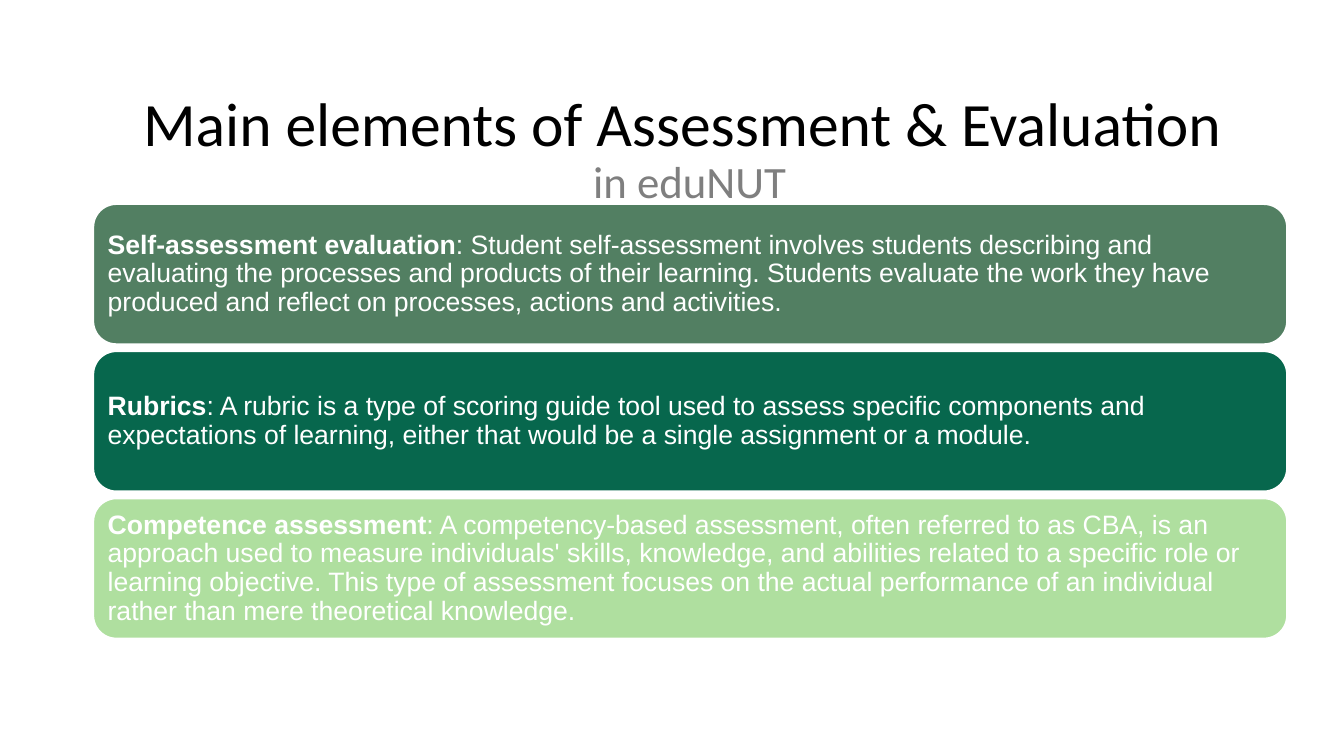
"""Build the slide on the main elements of assessment and evaluation."""
from pptx import Presentation
from pptx.dml.color import RGBColor
from pptx.enum.shapes import MSO_SHAPE
from pptx.enum.text import MSO_ANCHOR, MSO_AUTO_SIZE, PP_ALIGN
from pptx.util import Pt

PX = 9144
SLIDE_WIDTH, SLIDE_HEIGHT = 1333, 750
TITLE_BOX = (109, 82, 1150, 135)
CARDS_BOX = (92, 202, 1185, 432)
CARD_GAP = 6

BLACK = RGBColor(0x00, 0x00, 0x00)
GREY = RGBColor(0x7F, 0x7F, 0x7F)
WHITE = RGBColor(0xFF, 0xFF, 0xFF)
SAGE = RGBColor(0x52, 0x7F, 0x62)
FOREST = RGBColor(0x07, 0x67, 0x4D)
MINT = RGBColor(0xAF, 0xDF, 0x9F)

ELEMENTS = [
    (SAGE, "Self-assessment evaluation",
     ": Student self-assessment involves students describing and evaluating the "
     "processes and products of their learning. Students evaluate the work they have "
     "produced and reflect on processes, actions and activities."),
    (FOREST, "Rubrics",
     ": A rubric is a type of scoring guide tool used to assess specific components and "
     "expectations of learning, either that would be a single assignment or a module."),
    (MINT, "Competence assessment",
     ": A competency-based assessment, often referred to as CBA, is an approach used to "
     "measure individuals' skills, knowledge, and abilities related to a specific role or "
     "learning objective. This type of assessment focuses on the actual performance of an "
     "individual rather than mere theoretical knowledge."),
]


def set_values(target, values):
    """Set each named attribute of the target."""
    for name, value in values.items():
        setattr(target, name, value)


def add_run(paragraph, text, color, **font_values):
    """Add a run of text with the given color and font values."""
    run = paragraph.add_run()
    run.text = text
    run.font.color.rgb = color
    set_values(run.font, font_values)


def format_frame(frame, side, end, alignment):
    """Set margins and alignment of a text frame and return its paragraph."""
    set_values(frame, {
        "word_wrap": True, "auto_size": MSO_AUTO_SIZE.NONE,
        "vertical_anchor": MSO_ANCHOR.MIDDLE,
        "margin_left": side * PX, "margin_right": side * PX,
        "margin_top": end * PX, "margin_bottom": end * PX,
    })
    paragraph = frame.paragraphs[0]
    set_values(paragraph, {"alignment": alignment, "line_spacing": 0.9})
    return paragraph


def place_title(slide, box):
    """Fill the title placeholder with a heading and a grey second line."""
    title = slide.shapes.title
    set_values(title, dict(zip(("left", "top", "width", "height"),
                               (length * PX for length in box))))
    paragraph = format_frame(title.text_frame, 10, 5, PP_ALIGN.CENTER)
    add_run(paragraph, "Main elements of Assessment & Evaluation ", BLACK,
            size=Pt(44), name="Calibri")
    paragraph.add_line_break()
    add_run(paragraph, "in eduNUT", GREY, size=Pt(32), name="Calibri")


def add_card(slide, box, fill, term, description):
    """Add one rounded card holding a bold term and its description."""
    card = slide.shapes.add_shape(MSO_SHAPE.ROUNDED_RECTANGLE,
                                  *(length * PX for length in box))
    card.adjustments[0] = 0.167
    card.shadow.inherit = False
    card.fill.solid()
    card.fill.fore_color.rgb = fill
    card.line.color.rgb = WHITE
    card.line.width = Pt(2)
    paragraph = format_frame(card.text_frame, 8, 8, PP_ALIGN.LEFT)
    for text, bold in ((term, True), (description, False)):
        add_run(paragraph, text, WHITE, size=Pt(19), name="Arial", bold=bold)


def add_cards(slide, box):
    """Stack the element cards evenly in the box."""
    left, top, width, height = box
    card_height = (height - CARD_GAP * (len(ELEMENTS) - 1)) // len(ELEMENTS)
    for index, element in enumerate(ELEMENTS):
        card_top = top + index * (card_height + CARD_GAP)
        add_card(slide, (left, card_top, width, card_height), *element)


def main():
    """Build and save the presentation."""
    presentation = Presentation()
    presentation.slide_width = SLIDE_WIDTH * PX
    presentation.slide_height = SLIDE_HEIGHT * PX
    slide = presentation.slides.add_slide(presentation.slide_layouts[5])
    place_title(slide, TITLE_BOX)
    add_cards(slide, CARDS_BOX)
    presentation.save("out.pptx")


if __name__ == "__main__":
    main()
